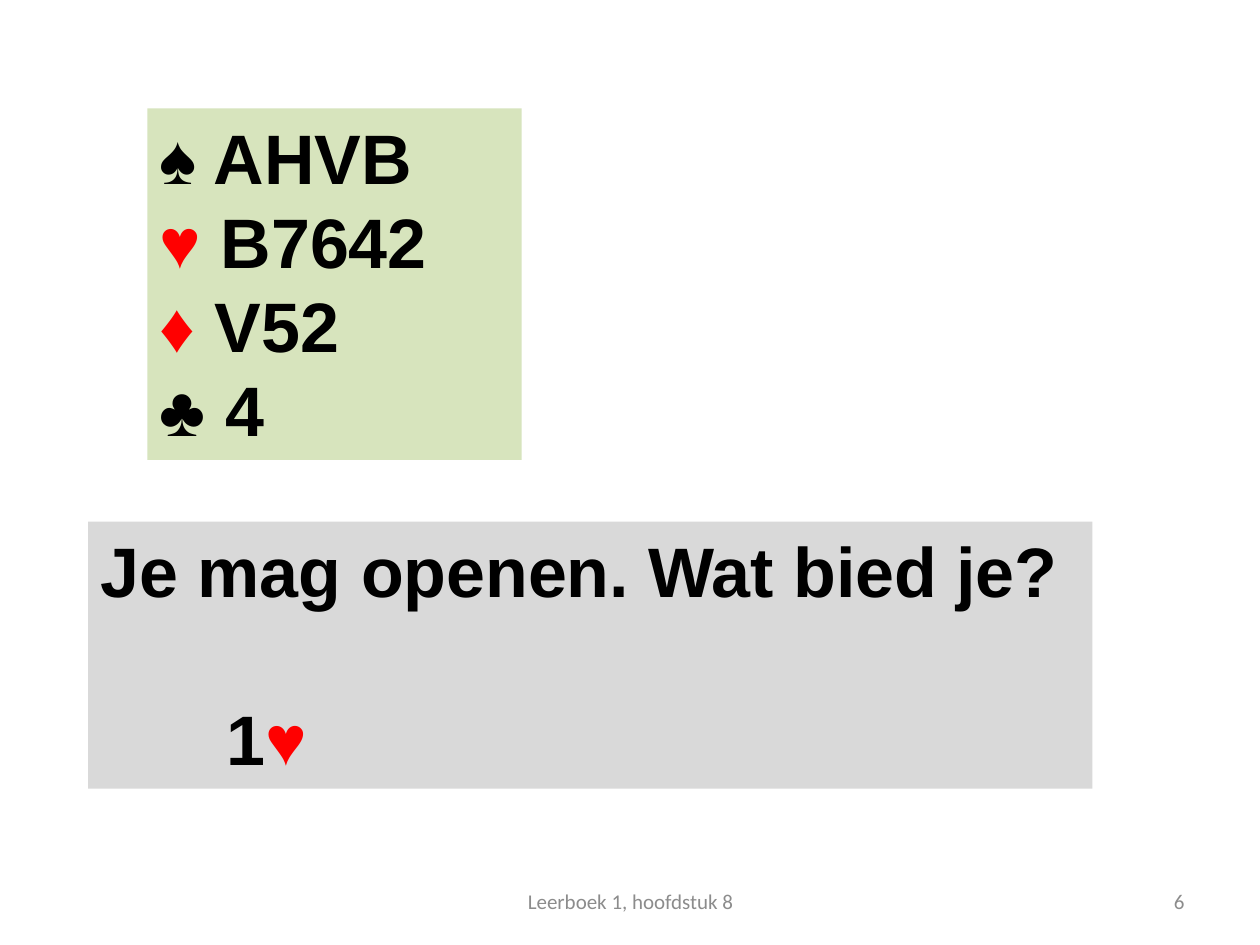
"""Build a bridge bidding question slide with a hand, a question and a footer."""
from dataclasses import dataclass

from pptx import Presentation
from pptx.dml.color import RGBColor
from pptx.enum.text import MSO_ANCHOR as Anchor, MSO_AUTO_SIZE as AutoSize, PP_ALIGN as Align
from pptx.util import Inches, Pt

COLORS = {
    "black": "000000",
    "red": "FF0000",
    "hand": "D7E4BD",
    "question": "D9D9D9",
    "footer": "8C8C8C",
}
RED_SUITS = "♥♦"


@dataclass(frozen=True)
class Line:
    """A paragraph, with its space before in points and its indent in inches."""
    text: str
    before: float = 0
    indent: float = 0


@dataclass(frozen=True)
class Panel:
    """A text box position in inches, with its lines and fill."""
    left: float
    top: float
    width: float
    height: float
    lines: tuple[Line, ...]
    fill: str


PANELS = (
    Panel(1.17, 0.86, 2.97, 2.79,
          (Line("♠ AHVB"), Line("♥ B7642"), Line("♦ V52"), Line("♣ 4")), "hand"),
    Panel(0.7, 4.14, 7.97, 2.12,
          (Line("Je mag openen. Wat bied je?"), Line("1♥", before=48, indent=1)), "question"),
)


def rgb(name: str) -> RGBColor:
    """Look up a named color."""
    return RGBColor.from_string(COLORS[name])


def add_span(para, text: str, *, size: float, font: str, color: str, bold: bool) -> None:
    """Append one formatted span to a paragraph."""
    span = para.add_run()
    span.text = text
    span.font.size = Pt(size)
    span.font.name = font
    span.font.bold = bold
    span.font.color.rgb = rgb(color)


def add_text(page, left: float, top: float, width: float, height: float,
             lines: tuple[Line, ...], *, size: float = 40, font: str = "Arial",
             color: str = "black", bold: bool = True, align=Align.LEFT,
             anchor=Anchor.TOP, grow: bool = True, fill: str | None = None) -> None:
    """Add a text box whose red suit symbols are colored."""
    box = page.shapes.add_textbox(Inches(left), Inches(top), Inches(width), Inches(height))
    if fill:
        box.fill.solid()
        box.fill.fore_color.rgb = rgb(fill)
    frame = box.text_frame
    frame.word_wrap = True
    frame.auto_size = AutoSize.SHAPE_TO_FIT_TEXT if grow else AutoSize.NONE
    frame.vertical_anchor = anchor
    for index, line in enumerate(lines):
        para = frame.add_paragraph() if index else frame.paragraphs[0]
        para.alignment = align
        para.space_before = Pt(line.before)
        para._p.get_or_add_pPr().set("marL", str(Inches(line.indent)))
        head, suit, tail = line.text, "", ""
        for symbol in RED_SUITS:
            if symbol in line.text:
                head, suit, tail = line.text.partition(symbol)
        for text, tint in ((head, color), (suit, "red"), (tail, color)):
            if text:
                add_span(para, text, size=size, font=font, color=tint, bold=bold)


def add_footer(page, left: float, width: float, text: str, align) -> None:
    """Add one small gray footer text."""
    add_text(page, left, 6.95, width, 0.4, (Line(text),), size=12, font="Calibri",
             color="footer", bold=False, align=align, anchor=Anchor.MIDDLE, grow=False)


def main() -> None:
    """Create and save the deck."""
    deck = Presentation()
    deck.slide_width, deck.slide_height = Inches(10), Inches(7.5)
    page = deck.slides.add_slide(deck.slide_layouts.get_by_name("Blank"))
    for panel in PANELS:
        add_text(page, panel.left, panel.top, panel.width, panel.height,
                 panel.lines, fill=panel.fill)
    add_footer(page, 7.17, 2.33, "6", Align.RIGHT)
    add_footer(page, 3.42, 3.17, "Leerboek 1, hoofdstuk 8", Align.CENTER)
    deck.save("out.pptx")


if __name__ == "__main__":
    main()
